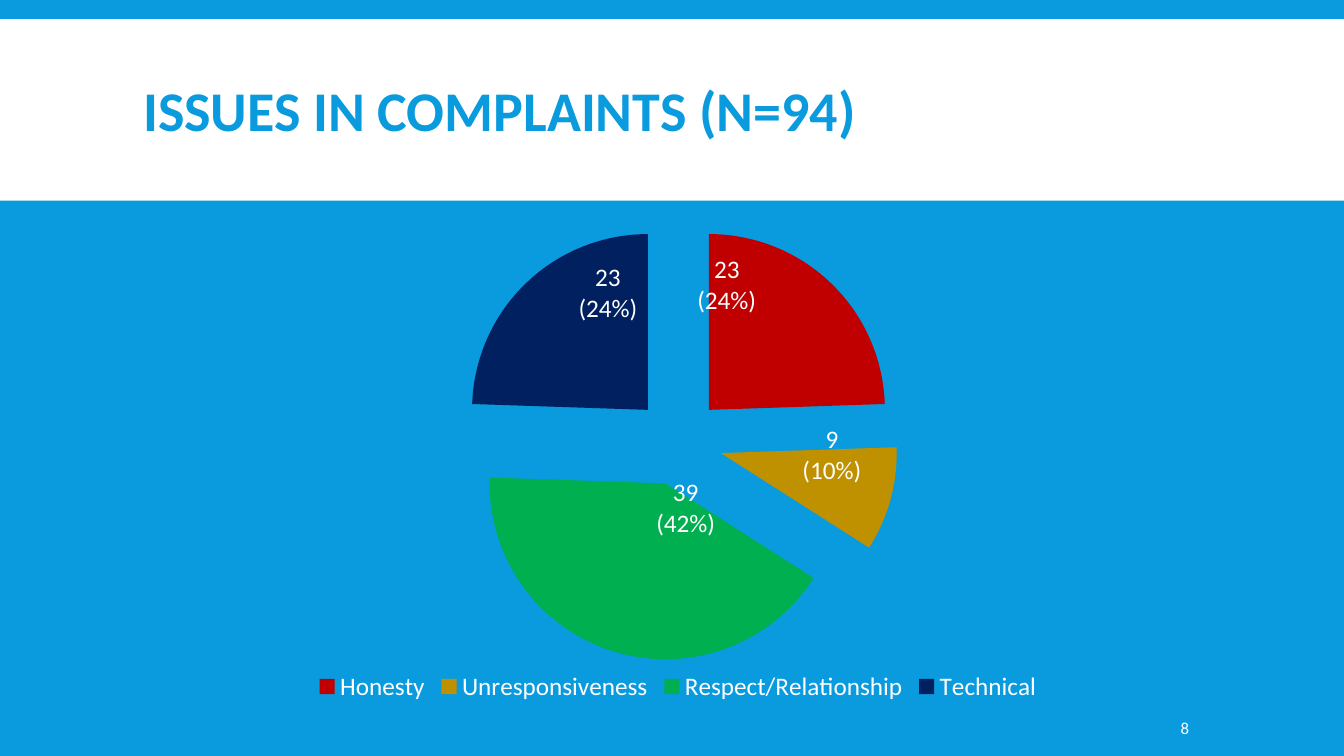
from lxml import etree
from pptx import Presentation
from pptx.chart.data import CategoryChartData
from pptx.dml.color import RGBColor
from pptx.enum.chart import XL_CHART_TYPE, XL_LABEL_POSITION, XL_LEGEND_POSITION
from pptx.enum.shapes import MSO_SHAPE
from pptx.enum.text import MSO_ANCHOR, PP_ALIGN
from pptx.oxml.ns import qn
from pptx.util import Inches, Pt

PIE = XL_CHART_TYPE.PIE
CENTER = XL_LABEL_POSITION.CENTER
BOTTOM = XL_LEGEND_POSITION.BOTTOM
RECTANGLE = MSO_SHAPE.RECTANGLE
MIDDLE = MSO_ANCHOR.MIDDLE
LEFT = PP_ALIGN.LEFT

FONT = "Calibri"
BLUE = "099BDD"
WHITE = "FFFFFF"
ISSUES = [
    ("Honesty", 23, "24%", "C00000", (-0.43, -0.61)),
    ("Unresponsiveness", 9, "10%", "BF9000", (0.26, -0.21)),
    ("Respect/Relationship", 39, "42%", "00B050", (0.46, -0.59)),
    ("Technical", 23, "24%", "002060", (0.21, -0.53)),
]


def paint(fill, color):
    fill.solid()
    fill.fore_color.rgb = RGBColor.from_string(color)


def style_font(font, size, color, bold=False):
    font.name = FONT
    font.size = Pt(size)
    font.bold = bold
    font.color.rgb = RGBColor.from_string(color)


def place(shape, box):
    shape.left, shape.top, shape.width, shape.height = map(Inches, box)


def make_layout(**settings):
    layout = etree.Element(qn("c:layout"))
    manual = etree.SubElement(layout, qn("c:manualLayout"))
    for name, value in settings.items():
        etree.SubElement(manual, qn(f"c:{name}")).set("val", str(value))
    return layout


def add_header(page, box):
    left, top, width, height = box
    band = page.shapes.add_shape(RECTANGLE, *map(Inches, box))
    band.shadow.inherit = False
    paint(band.fill, WHITE)
    band.line.fill.background()

    title = page.shapes.title
    title._element.addprevious(band._element)
    place(title, (left + 1.32, top + 0.12, 10.7, height - 0.15))
    frame = title.text_frame
    frame.text = "ISSUES IN COMPLAINTS (N=94)"
    frame.vertical_anchor = MIDDLE
    para = frame.paragraphs[0]
    para.alignment = LEFT
    para.line_spacing = 0.85
    style_font(para.runs[0].font, 40, BLUE, bold=True)


def label_slice(point, text, across, down):
    label = point.data_label
    label.text_frame.text = text
    for para in label.text_frame.paragraphs:
        for span in para.runs:
            style_font(span.font, 18, WHITE)
    label.position = CENTER
    element = label._dLbl
    element.find(qn("c:idx")).addnext(make_layout(x=across, y=down))
    element.find(qn("c:showPercent")).set("val", "1")


def add_legend(chart):
    chart.has_legend = True
    legend = chart.legend
    legend.position = BOTTOM
    legend.include_in_layout = False
    style_font(legend.font, 18, WHITE)
    for layout in legend._element.findall(qn("c:layout")):
        legend._element.remove(layout)
    legend._element.find(qn("c:legendPos")).addnext(
        make_layout(xMode="edge", yMode="edge", x=0.21, y=0.9))


def add_issue_pie(page, box):
    width, height = box[2:]
    data = CategoryChartData()
    data.categories = [issue[0] for issue in ISSUES]
    data.add_series("Series 1", [issue[1] for issue in ISSUES])
    chart = page.shapes.add_chart(PIE, *map(Inches, box), data).chart
    chart.has_title = False
    style_font(chart.font, 18, WHITE)
    add_legend(chart)

    plot = chart.plots[0]
    plot.vary_by_categories = True
    series = plot.series[0]
    labels = series.data_labels
    labels.show_value = True
    labels.show_percentage = True
    style_font(labels.font, 18, WHITE, bold=True)
    for index, (name, count, share, color, (across, down)) in enumerate(ISSUES):
        point = series.points[index]
        paint(point.format.fill, color)
        label_slice(point, f"{count}\n({share})", across / width, down / height)

    explosion = etree.Element(qn("c:explosion"))
    explosion.set("val", "25")
    series._element.find(qn("c:dPt")).addprevious(explosion)

    area = chart._chartSpace.chart.plotArea
    for layout in area.findall(qn("c:layout")):
        area.remove(layout)
    area.insert(0, make_layout(
        layoutTarget="inner", xMode="edge", yMode="edge", x=0, y=0, w=1, h=0.89))


def add_page_number(page, box):
    frame = page.shapes.add_textbox(*map(Inches, box)).text_frame
    frame.word_wrap = True
    frame.vertical_anchor = MIDDLE
    frame.margin_left = Inches(0.05)
    frame.text = "8"
    style_font(frame.paragraphs[0].runs[0].font, 12, WHITE)


def main():
    deck = Presentation()
    deck.slide_width, deck.slide_height = Inches(13.33), Inches(7.5)
    page = deck.slides.add_slide(deck.slide_layouts[5])
    paint(page.background.fill, BLUE)
    add_header(page, (0, 0.19, 13.33, 1.8))
    add_issue_pie(page, (0.45, 2.2, 12.56, 4.9))
    add_page_number(page, (11.66, 7.02, 1.03, 0.4))
    deck.save("out.pptx")


if __name__ == "__main__":
    main()
